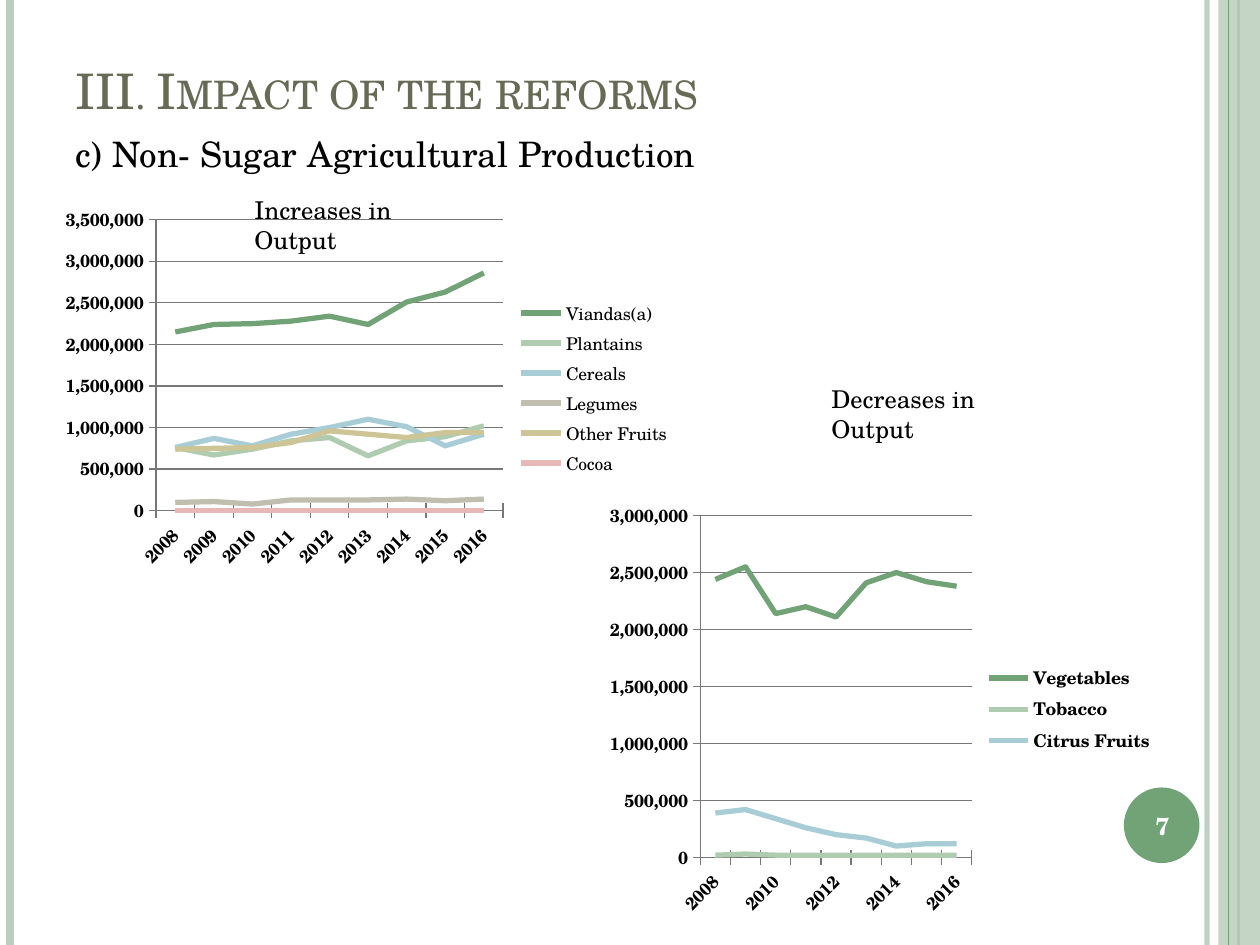
from lxml.etree import SubElement
from pptx import Presentation
from pptx.chart.data import CategoryChartData
from pptx.dml.color import RGBColor
from pptx.enum.chart import XL_CHART_TYPE, XL_LEGEND_POSITION, XL_TICK_MARK
from pptx.enum.shapes import MSO_CONNECTOR, MSO_SHAPE
from pptx.enum.text import MSO_ANCHOR, PP_ALIGN
from pptx.oxml.ns import qn
from pptx.util import Inches, Pt

COLORS = {
    "pale": "BCCEBD",
    "green": "72A376",
    "olive": "676A55",
    "black": "000000",
    "white": "FFFFFF",
    "axis": "777777",
}
SERIES_COLORS = ["72A376", "B0CCB0", "A8CDD7", "C0BEAF", "CEC597", "E8B7B7"]
FONT = "TeX Gyre Schola"
YEARS = [str(year) for year in range(2008, 2017)]

INCREASES = {
    "Viandas(a)": [2150000, 2240000, 2250000, 2280000, 2340000, 2240000, 2510000, 2630000, 2860000],
    "Plantains": [760000, 670000, 740000, 840000, 880000, 660000, 840000, 890000, 1020000],
    "Cereals": [760000, 870000, 780000, 920000, 1000000, 1100000, 1010000, 780000, 920000],
    "Legumes": [100000, 110000, 80000, 130000, 130000, 130000, 140000, 120000, 140000],
    "Other Fruits": [740000, 750000, 760000, 820000, 960000, 920000, 880000, 940000, 940000],
    "Cocoa": [0] * 9,
}
DECREASES = {
    "Vegetables": [2440000, 2550000, 2140000, 2200000, 2110000, 2410000, 2500000, 2420000, 2380000],
    "Tobacco": [20000, 30000, 20000, 20000, 20000, 20000, 20000, 20000, 20000],
    "Citrus Fruits": [390000, 420000, 340000, 260000, 200000, 170000, 100000, 120000, 120000],
}


def rgb(name):
    return RGBColor.from_string(COLORS[name])


class SlideBuilder:
    def __init__(self, slide):
        self.slide = slide

    def set_opacity(self, shape, percent):
        color = next(shape._element.spPr.iter(qn("a:srgbClr")))
        SubElement(color, qn("a:alpha"), val=str(percent * 1000))

    def stripe(self, x, color, width, opacity=100):
        line = self.slide.shapes.add_connector(
            MSO_CONNECTOR.STRAIGHT, Inches(x), 0, Inches(x), Inches(7.5))
        line.line.color.rgb = rgb(color)
        line.line.width = Pt(width)
        if opacity < 100:
            self.set_opacity(line, opacity)
        SubElement(line._element.spPr, qn("a:effectLst"))

    def shape(self, kind, box, color, opacity=100):
        shape = self.slide.shapes.add_shape(kind, *map(Inches, box))
        shape.shadow.inherit = False
        shape.fill.solid()
        shape.fill.fore_color.rgb = rgb(color)
        shape.line.fill.background()
        if opacity < 100:
            self.set_opacity(shape, opacity)

    def text(self, words, box, size, color="black", bold=False,
             anchor=MSO_ANCHOR.TOP, align=PP_ALIGN.LEFT, space_before=0):
        frame = self.slide.shapes.add_textbox(*map(Inches, box)).text_frame
        frame.word_wrap = True
        frame.vertical_anchor = anchor
        frame.text = words
        paragraph = frame.paragraphs[0]
        paragraph.alignment = align
        paragraph.space_before = Pt(space_before)
        run = paragraph.runs[0]
        run.font.name = FONT
        run.font.size = Pt(size)
        run.font.bold = bold
        run.font.color.rgb = rgb(color)
        return run

    def font(self, font, bold):
        font.name = FONT
        font.size = Pt(10)
        font.bold = bold
        font.color.rgb = rgb("black")

    def line_chart(self, box, crops, bold_legend):
        data = CategoryChartData(number_format="#,##0")
        data.categories = YEARS
        for crop, tonnes in crops.items():
            data.add_series(crop, tonnes)
        chart = self.slide.shapes.add_chart(
            XL_CHART_TYPE.LINE, *map(Inches, box), data).chart
        chart.has_title = False
        self.font(chart.font, bold_legend)
        chart.has_legend = True
        chart.legend.position = XL_LEGEND_POSITION.RIGHT
        chart.legend.include_in_layout = False
        self.font(chart.legend.font, bold_legend)
        plot = chart.plots[0]
        plot.vary_by_categories = False
        for series, color in zip(plot.series, SERIES_COLORS):
            series.smooth = False
            series.format.line.color.rgb = RGBColor.from_string(color)
            series.format.line.width = Pt(3)
        for axis in (chart.category_axis, chart.value_axis):
            axis.major_tick_mark = XL_TICK_MARK.CROSS
            axis.format.line.color.rgb = rgb("axis")
            self.font(axis.tick_labels.font, True)
        values = chart.value_axis
        values.has_major_gridlines = True
        values.major_gridlines.format.line.color.rgb = rgb("axis")
        values.tick_labels.number_format = "#,##0"
        values.tick_labels.number_format_is_linked = False


def main():
    presentation = Presentation()
    presentation.slide_width = Inches(10)
    presentation.slide_height = Inches(7.5)
    builder = SlideBuilder(
        presentation.slides.add_slide(presentation.slide_layouts[6]))

    builder.stripe(9.58, "pale", 3, 93)
    builder.stripe(0.08, "pale", 4.5)
    builder.stripe(9.83, "green", 1.5)
    builder.shape(MSO_SHAPE.RECTANGLE, (9.67, 0, 0.33, 7.5), "pale", 87)
    builder.stripe(9.75, "green", 0.75)
    builder.shape(MSO_SHAPE.OVAL, (8.92, 6.25, 0.6, 0.6), "green")

    title = builder.text("III. Impact of the reforms", (0.5, 0.3, 8.17, 0.7),
                         28, "olive", anchor=MSO_ANCHOR.BOTTOM)
    title.font._element.set("cap", "small")
    builder.text("c) Non- Sugar Agricultural Production",
                 (0.5, 1, 8.17, 6.08), 20, space_before=6)
    builder.text("7", (8.89, 6.27, 0.67, 0.57), 14, "white", True,
                 MSO_ANCHOR.MIDDLE, PP_ALIGN.CENTER)

    builder.line_chart((0.42, 1.58, 5, 3), INCREASES, False)
    builder.line_chart((4.75, 3.92, 4.5, 3.42), DECREASES, True)
    builder.text("Increases in Output", (1.92, 1.5, 1.9, 0.34), 14)
    builder.text("Decreases in Output", (6.5, 3, 1.99, 0.34), 14)

    presentation.save("out.pptx")


if __name__ == "__main__":
    main()
